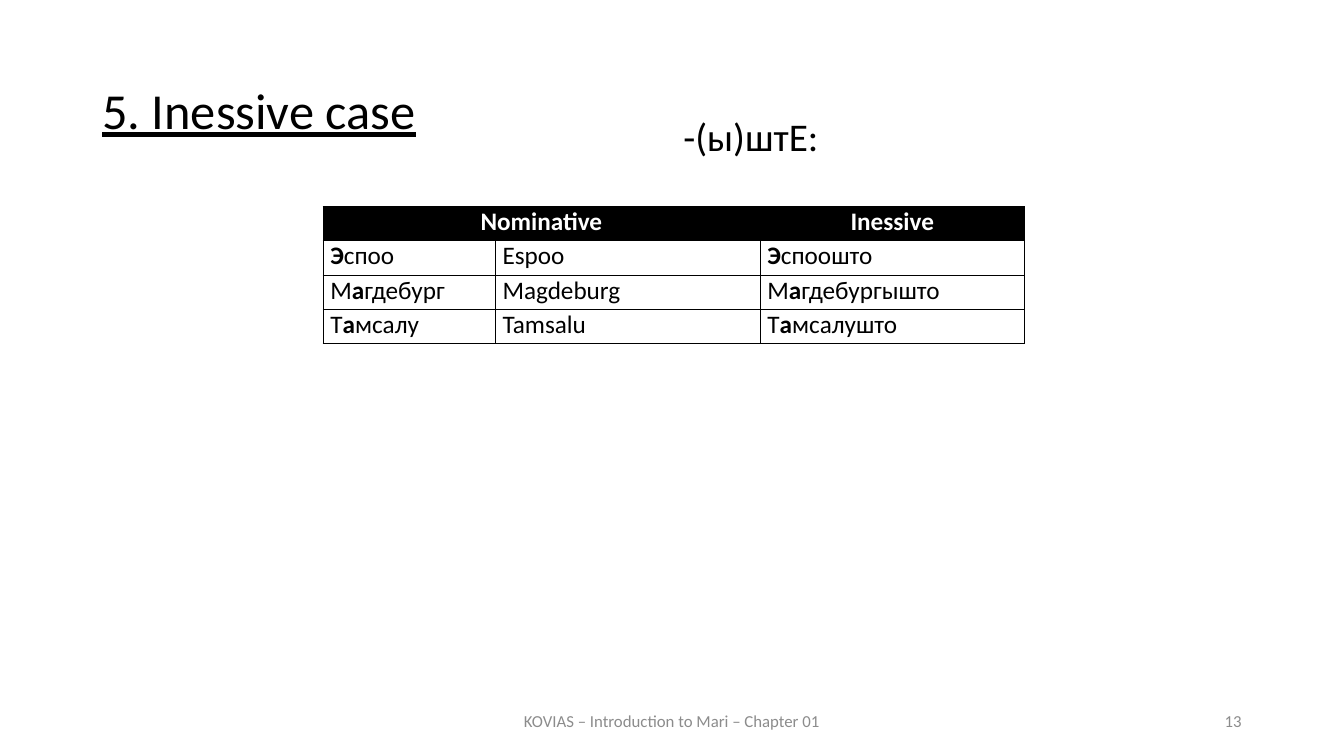
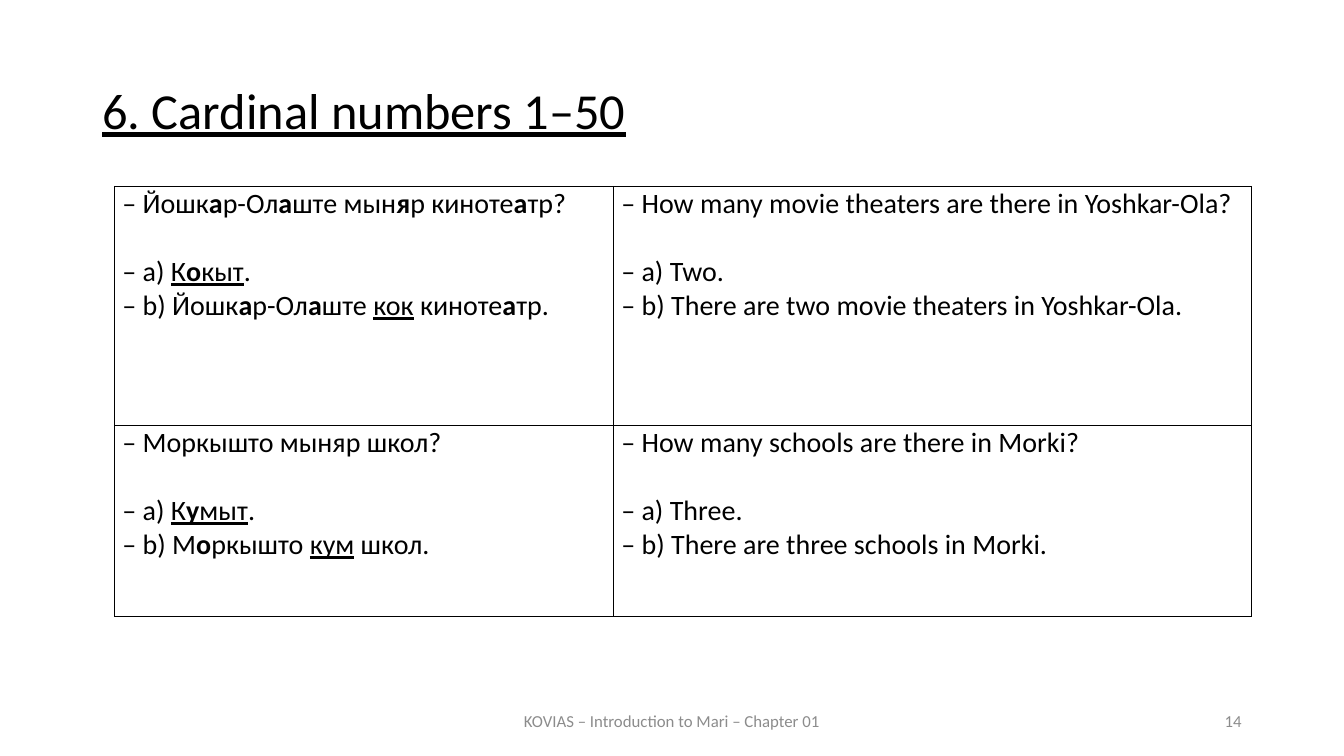
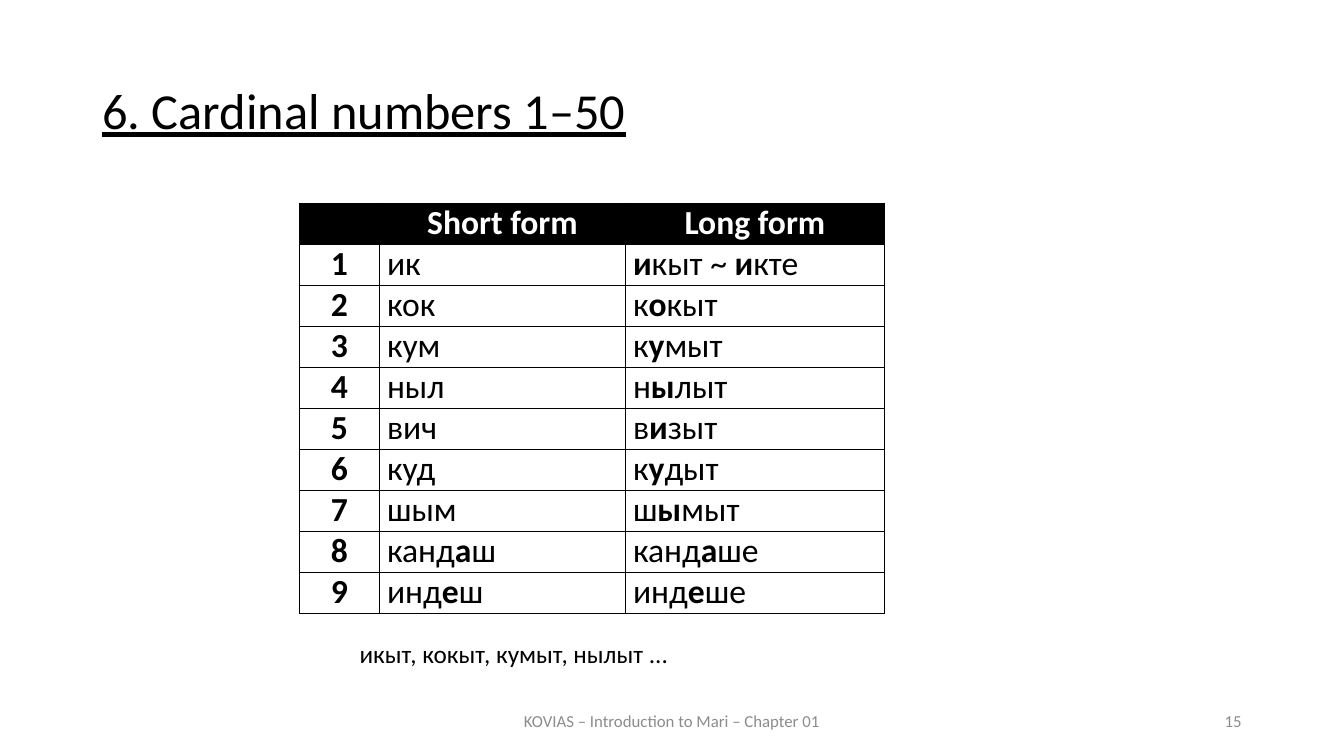
import itertools

import lxml.etree
import pptx
import pptx.dml.color
import pptx.enum.text
import pptx.oxml.ns
import pptx.util

Pt = pptx.util.Pt
qn = pptx.oxml.ns.qn
ALIGN = pptx.enum.text.PP_ALIGN
ANCHOR = pptx.enum.text.MSO_ANCHOR
COLORS = {"text": "000000", "line": "000000", "header": "000000",
          "header_text": "FFFFFF", "footer": "8C8C8C"}
ALIGNS = {"l": ALIGN.LEFT, "c": ALIGN.CENTER, "r": ALIGN.RIGHT, "j": ALIGN.JUSTIFY}


class Deck:
    font = "Calibri"
    width, height = 960, 540
    left, body_width = 66, 828
    footer = "KOVIAS – Introduction to Mari – Chapter 01"
    first_number = 13

    def __init__(self):
        self.prs = pptx.Presentation()
        self.prs.slide_width, self.prs.slide_height = Pt(self.width), Pt(self.height)
        self.numbers = itertools.count(self.first_number)

    def rgb(self, name):
        return pptx.dml.color.RGBColor.from_string(COLORS[name])

    def slide(self, title):
        self.s = self.prs.slides.add_slide(self.prs.slide_layouts[6])
        self.text(f"_{title}_", self.left, 28.8, self.body_width, 104.4, 36,
                  anchor=ANCHOR.MIDDLE, spacing=0.9)
        small = dict(size=12, color="footer", anchor=ANCHOR.MIDDLE)
        self.text(self.footer, (self.width - 324) / 2, 500.4, 324, 28.8, align="c", **small)
        self.text(str(next(self.numbers)), self.left + self.body_width - 216, 500.4,
                  216, 28.8, align="r", **small)

    def paragraph(self, p, text, size, color="text", align="l", bold=False):
        """Text between * is bold, text between _ is underlined."""
        p.alignment = ALIGNS[align]
        f = p.font
        f.name, f.size, f.bold = self.font, Pt(size), bold
        f.color.rgb = self.rgb(color)
        for i, part in enumerate(text.split("_")):
            for j, piece in enumerate(part.split("*")):
                if piece:
                    r = p.add_run()
                    r.text = piece
                    if i % 2:
                        r.font.underline = True
                    if (j + self.open_bold(text, i)) % 2:
                        r.font.bold = True

    def open_bold(self, text, part):
        return "_".join(text.split("_")[:part]).count("*")

    def text(self, text, x, y, w, h, size, color="text", align="l",
             anchor=ANCHOR.TOP, spacing=1.0):
        sp = self.s.shapes.add_textbox(Pt(x), Pt(y), Pt(w), Pt(h))
        tf = sp.text_frame
        tf.word_wrap, tf.vertical_anchor = True, anchor
        p = tf.paragraphs[0]
        p.line_spacing = spacing
        self.paragraph(p, text, size, color, align)

    def borders(self, cell, weight):
        tc_pr = cell._tc.get_or_add_tcPr()
        for side in ("a:lnL", "a:lnR", "a:lnT", "a:lnB"):
            ln = lxml.etree.SubElement(tc_pr, qn(side), w=str(Pt(weight)))
            fill = lxml.etree.SubElement(ln, qn("a:solidFill"))
            lxml.etree.SubElement(fill, qn("a:srgbClr"), val=COLORS["line"])

    def table(self, rows, x, y, widths, heights, size, aligns,
              header=True, weight=0.5, bold_column=None, lead_gap=0):
        table = self.s.shapes.add_table(len(rows), len(widths), Pt(x), Pt(y),
                                        Pt(sum(widths)), Pt(sum(heights))).table
        table.first_row = table.horz_banding = False
        for column, w in zip(table.columns, widths):
            column.width = Pt(w)
        for row, h in zip(table.rows, heights):
            row.height = Pt(h)
        for i, row in enumerate(rows):
            head = header and i == 0
            for j, text in enumerate(row):
                cell = table.cell(i, j)
                self.borders(cell, weight)
                cell.margin_left = cell.margin_right = Pt(5.4)
                cell.margin_top = cell.margin_bottom = 0
                if head:
                    cell.fill.solid()
                    cell.fill.fore_color.rgb = self.rgb("header")
                else:
                    cell.fill.background()
                if text is None:
                    table.cell(i, j - 1).merge(cell)
                    continue
                tf = cell.text_frame
                for k, line in enumerate(text.split("\n")):
                    p = tf.add_paragraph() if k else tf.paragraphs[0]
                    if k == 0 and lead_gap:
                        p.space_after = Pt(lead_gap)
                    self.paragraph(p, line, size, "header_text" if head else "text",
                                   "c" if head else aligns[j], head or j == bold_column)


def main():
    deck = Deck()

    deck.slide("5. Inessive case")
    deck.text("-(ы)штЕ:", 481, 80.6, 130.3, 51, 28, spacing=0.9)
    cases = [("Nominative", None, "Inessive"),
             ("*Э*споо", "Espoo", "*Э*споошто"),
             ("М*а*гдебург", "Magdeburg", "М*а*гдебургышто"),
             ("Т*а*мсалу", "Tamsalu", "Т*а*мсалушто")]
    deck.table(cases, 230.6, 147.5, [123, 189.2, 189.2], [24.5] * len(cases), 18, "jjj")

    deck.slide("6. Cardinal numbers 1–50")
    dialogues = [
        ("– Йошк*а*р-Ол*а*ште мын*я*р киноте*а*тр?\n– a) _К*о*кыт_.\n"
         "– b) Йошк*а*р-Ол*а*ште _кок_ киноте*а*тр.",
         "– How many movie theaters are there in Yoshkar-Ola?\n– a) Two.\n"
         "– b) There are two movie theaters in Yoshkar-Ola."),
        ("– Моркышто мыняр школ?\n– a) _К*у*мыт_.\n– b) М*о*ркышто _кум_ школ.",
         "– How many schools are there in Morki?\n– a) Three.\n"
         "– b) There are three schools in Morki."),
    ]
    deck.table(dialogues, 82, 133.2, [356.4, 455.8], [170.6, 136.8], 20, "jl",
               header=False, weight=1, lead_gap=24.4)

    deck.slide("6. Cardinal numbers 1–50")
    forms = [("ик", "*и*кыт ~ *и*кте"), ("кок", "к*о*кыт"), ("кум", "к*у*мыт"),
             ("ныл", "н*ы*лыт"), ("вич", "в*и*зыт"), ("куд", "к*у*дыт"),
             ("шым", "ш*ы*мыт"), ("канд*а*ш", "канд*а*ше"), ("инд*е*ш", "инд*е*ше")]
    numerals = [("", "Short form", "Long form")]
    numerals += [(str(n), *pair) for n, pair in enumerate(forms, 1)]
    deck.table(numerals, 213.8, 145, [57.3, 175.7, 185], [29.3] * len(numerals), 24, "cjj",
               bold_column=0)
    deck.text("икыт, кокыт, кумыт, нылыт ...", 249.8, 452.2, 480, 28.8, 18)

    deck.prs.save("out.pptx")


if __name__ == "__main__":
    main()
